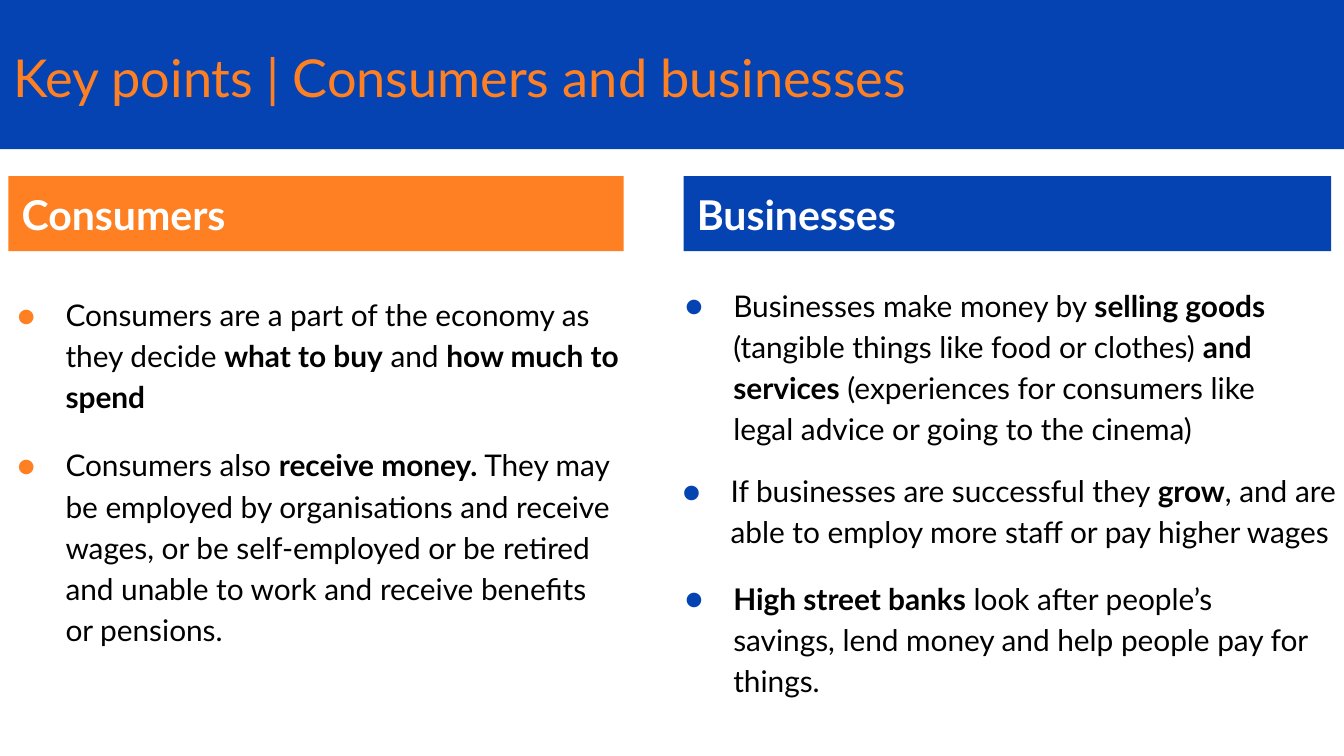
from lxml import etree
from pptx import Presentation
from pptx.dml.color import RGBColor
from pptx.enum.shapes import MSO_SHAPE as Shape
from pptx.enum.text import MSO_ANCHOR as Anchor, PP_ALIGN as Align
from pptx.oxml.ns import qn
from pptx.util import Cm, Pt

COLOURS = {"blue": "0543B3", "orange": "FF8022", "white": "FFFFFF", "black": "000000"}


def add_block(left, top, width, height, fill=None):
    box = page.shapes.add_shape(Shape.RECTANGLE, Cm(left), Cm(top), Cm(width), Cm(height))
    box.shadow.inherit = False
    box.line.fill.background()
    if fill:
        box.fill.solid()
        box.fill.fore_color.rgb = RGBColor.from_string(COLOURS[fill])
    else:
        box.fill.background()
    frame = box.text_frame
    frame.word_wrap = True
    frame.margin_left = frame.margin_right = Cm(0.25)
    frame.margin_top = frame.margin_bottom = Cm(0.25)
    return box


def write(box, text, size, colour, anchor=Anchor.MIDDLE, bold=False):
    box.text_frame.vertical_anchor = anchor
    para = box.text_frame.paragraphs[0]
    para.alignment = Align.LEFT
    for index, part in enumerate(text.split("*")):
        if part:
            span = para.add_run()
            span.text = part
            span.font.name = "Lato"
            span.font.size = Pt(size)
            span.font.bold = bold or index % 2 == 1
            span.font.color.rgb = RGBColor.from_string(COLOURS[colour])
    return para


deck = Presentation()
deck.slide_width = Cm(25.4)
deck.slide_height = Cm(14.29)
page = deck.slides.add_slide(deck.slide_layouts[6])

add_block(0, 0, 25.4, 2.82, "blue")
title = add_block(0, 0.74, 22.15, 1.42)
write(title, "Key points | Consumers and businesses", 28, "orange")

headings = [
    ("Consumers", 0.16, 11.63, "orange"),
    ("Businesses", 12.92, 12.24, "blue"),
]
for text, left, width, colour in headings:
    heading = add_block(left, 3.33, width, 1.42, colour)
    write(heading, text, 22, "white", bold=True)

points = [
    (-0.28, 5.26, 12.24, 2.77, "orange",
     "Consumers are a part of the economy as they decide *what to buy* and *how much to spend*"),
    (-0.28, 8.1, 12.07, 4.34, "orange",
     "Consumers also *receive money.* They may be employed by organisations and receive wages, "
     "or be self-employed or be retired and unable to work and receive benefits or pensions."),
    (12.34, 5.08, 12.88, 3.56, "blue",
     "Businesses make money by *selling goods *(tangible things like food or clothes) "
     "*and services* (experiences for consumers like legal advice or going to the cinema)"),
    (12.29, 8.59, 13.54, 1.98, "blue",
     "If businesses are successful they *grow*, and are able to employ more staff or pay higher wages"),
    (12.34, 10.62, 12.88, 3.28, "blue",
     "*High street banks* look after people’s savings, lend money and help people pay for things."),
]
for left, top, width, height, colour, text in points:
    point = add_block(left, top, width, height)
    para = write(point, text, 16, "black", Anchor.TOP)
    para.line_spacing = 1.15
    properties = para._p.get_or_add_pPr()
    properties.set("marL", str(Cm(1.27)))
    properties.set("indent", str(Cm(-0.91)))
    bullet_colour = etree.SubElement(properties, qn("a:buClr"))
    etree.SubElement(bullet_colour, qn("a:srgbClr"), val=COLOURS[colour])
    etree.SubElement(properties, qn("a:buFont"), typeface="Lato")
    etree.SubElement(properties, qn("a:buChar"), char="●")

deck.save("out.pptx")
